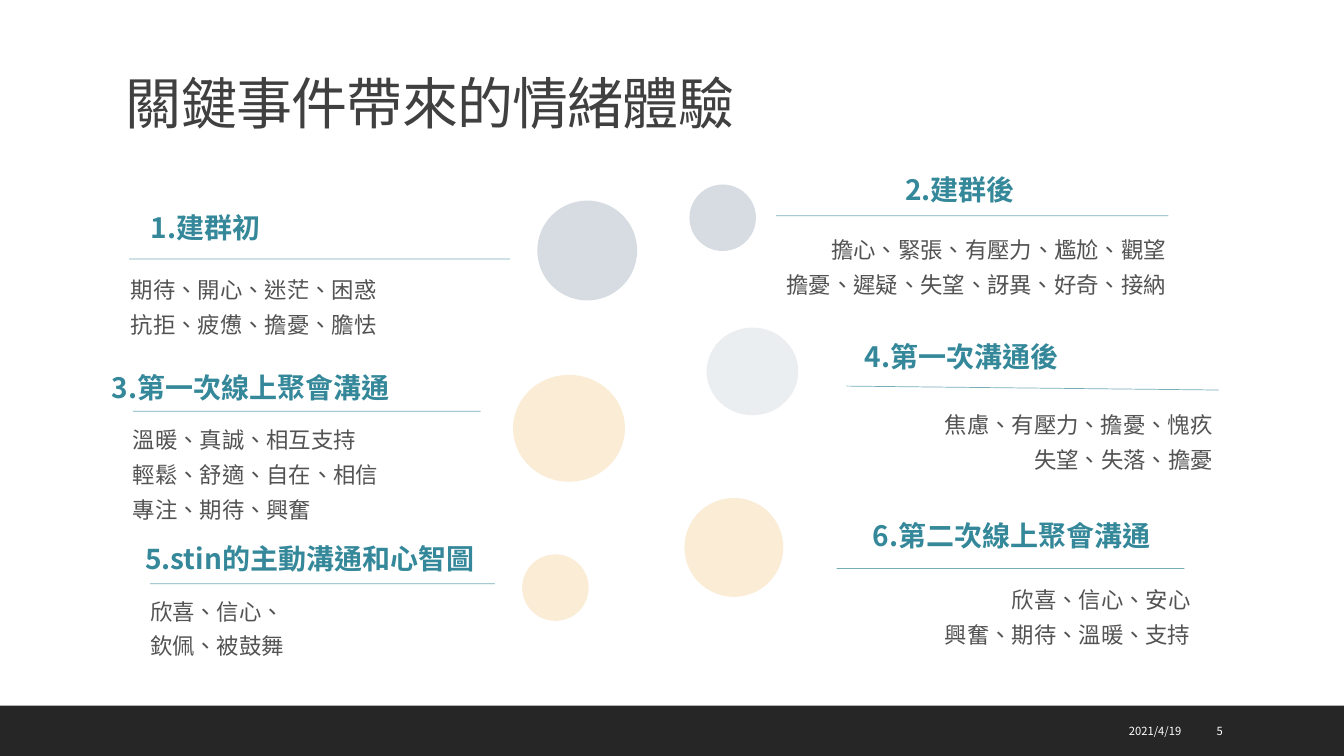
from dataclasses import dataclass

import lxml.etree
import pptx
import pptx.dml.color
import pptx.enum.shapes
import pptx.enum.text
import pptx.oxml.ns
import pptx.util

Pt = pptx.util.Pt
Align = pptx.enum.text.PP_ALIGN
Anchor = pptx.enum.text.MSO_ANCHOR
Shape = pptx.enum.shapes.MSO_SHAPE
qn = pptx.oxml.ns.qn

FONT = "Noto Sans CJK SC"
TEAL, DARK, TITLE_GREY, BODY_GREY, WHITE = "348899", "262626", "404040", "535353", "FFFFFF"
BLUE_GREY, PALE_GREY, CREAM = "D7DCE2", "EBEEF1", "FAECD5"
HEADING_HEIGHT = 31.7
BODY_LINE_HEIGHT = 27


@dataclass(frozen=True)
class Style:
    size: float
    color: str
    bold: bool = False
    align: Align = Align.LEFT
    line_spacing: float | None = None
    tracking: int | None = None
    anchor: Anchor = Anchor.TOP
    side_inset: float = 7.2
    wrap: bool = True


@dataclass(frozen=True)
class Event:
    heading: str
    heading_at: tuple[float, float, float]  # left, top, width
    rule: tuple[float, float, float, float]  # from x, y to x, y
    feelings: tuple[str, ...]
    feelings_at: tuple[float, float, float]
    align: Align


@dataclass(frozen=True)
class Circle:
    left: float
    top: float
    width: float
    height: float
    color: str


TITLE = Style(40, TITLE_GREY, line_spacing=0.9, tracking=-50, anchor=Anchor.BOTTOM, side_inset=3.6)
HEADING = Style(20, TEAL, bold=True)
DATE = Style(8, WHITE, align=Align.RIGHT, anchor=Anchor.MIDDLE, side_inset=3.6)
PAGE_NUMBER = Style(8, WHITE, anchor=Anchor.MIDDLE, side_inset=3.6, wrap=False)

EVENTS = (
    Event("1.建群初", (100.8, 146.9, 165.6), (364.3, 185, 92.2, 185),
          ("期待、開心、迷茫、困惑", "抗拒、疲憊、擔憂、膽怯"), (86.4, 187.9, 270), Align.LEFT),
    Event("3.第一次線上聚會溝通", (72.7, 261.4, 261.4), (343.4, 293.8, 95, 293.8),
          ("溫暖、真誠、相互支持", "輕鬆、舒適、自在、相信", "專注、期待、興奮"),
          (87.8, 295.2, 283.7), Align.LEFT),
    Event("2.建群後", (639.4, 119.5, 232.6), (834.5, 154.1, 554.4, 154.1),
          ("擔心、緊張、有壓力、尷尬、觀望", "擔憂、遲疑、失望、訝異、好奇、接納"),
          (548.6, 159.1, 291.6), Align.RIGHT),
    Event("4.第一次溝通後", (610.6, 239, 288.7), (870.5, 278.6, 604.8, 275.8),
          ("焦慮、有壓力、擔憂、愧疚", "失望、失落、擔憂"), (603.4, 284.4, 270), Align.RIGHT),
    Event("6.第二次線上聚會溝通", (616.3, 366.5, 270), (846, 406.1, 597.6, 406.1),
          ("欣喜、信心、安心", "興奮、期待、溫暖、支持"), (587.5, 409.7, 270), Align.RIGHT),
    Event("5.stin的主動溝通和心智圖", (96.5, 383, 258.5), (353.5, 416.9, 107.3, 416.9),
          ("欣喜、信心、", "欽佩、被鼓舞"), (100.1, 417.6, 283.7), Align.LEFT),
)

CIRCLES = (
    Circle(383.8, 143.3, 71.3, 71.3, BLUE_GREY),
    Circle(492.5, 131.8, 47.5, 47.5, BLUE_GREY),
    Circle(504.7, 234, 65.5, 62.6, PALE_GREY),
    Circle(488.9, 355.7, 70.6, 70.6, CREAM),
    Circle(366.5, 267.8, 79.9, 76.3, CREAM),
    Circle(373, 396, 47.5, 47.5, CREAM),
)


def rgb(color: str) -> pptx.dml.color.RGBColor:
    return pptx.dml.color.RGBColor.from_string(color)


def add_text(page, lines: tuple[str, ...], left: float, top: float, width: float,
             height: float, style: Style) -> None:
    box = page.shapes.add_textbox(Pt(left), Pt(top), Pt(width), Pt(height))
    frame = box.text_frame
    frame.word_wrap = style.wrap
    frame.vertical_anchor = style.anchor
    frame.margin_left = frame.margin_right = Pt(style.side_inset)
    frame.margin_top = frame.margin_bottom = Pt(3.6)
    for index, line in enumerate(lines):
        para = frame.add_paragraph() if index else frame.paragraphs[0]
        para.alignment = style.align
        para.line_spacing = style.line_spacing
        span = para.add_run()
        span.text = line
        span.font.name = FONT
        span.font.size = Pt(style.size)
        span.font.bold = style.bold
        span.font.color.rgb = rgb(style.color)
        properties = span.font._element
        properties.set("lang", "zh-TW")
        lxml.etree.SubElement(properties, qn("a:ea")).set("typeface", FONT)
        if style.tracking is not None:
            properties.set("spc", str(style.tracking))


def add_filled(page, kind: Shape, left: float, top: float, width: float, height: float,
               color: str) -> None:
    shape = page.shapes.add_shape(kind, Pt(left), Pt(top), Pt(width), Pt(height))
    shape.shadow.inherit = False
    shape.fill.solid()
    shape.fill.fore_color.rgb = rgb(color)
    shape.line.fill.background()


def add_rule(page, ends: tuple[float, float, float, float]) -> None:
    """Draw a thin teal line at 67 % opacity."""
    rule = page.shapes.add_connector(
        pptx.enum.shapes.MSO_CONNECTOR.STRAIGHT, *(Pt(end) for end in ends))
    rule.line.width = Pt(0.5)
    rule.line.color.rgb = rgb(TEAL)
    properties = rule._element.spPr
    color = properties.find(".//" + qn("a:srgbClr"))
    lxml.etree.SubElement(color, qn("a:alpha")).set("val", "67000")
    lxml.etree.SubElement(properties, qn("a:effectLst"))


def add_event(page, event: Event) -> None:
    add_rule(page, event.rule)
    add_text(page, (event.heading,), *event.heading_at, HEADING_HEIGHT, HEADING)
    feelings = Style(16, BODY_GREY, align=event.align, line_spacing=1.3)
    height = BODY_LINE_HEIGHT * len(event.feelings)
    add_text(page, event.feelings, *event.feelings_at, height, feelings)


def main() -> None:
    deck = pptx.Presentation()
    deck.slide_width, deck.slide_height = Pt(960), Pt(540)
    page = deck.slides.add_slide(deck.slide_layouts[6])
    add_filled(page, Shape.RECTANGLE, 0, 504, 960, 36, DARK)
    add_text(page, ("關鍵事件帶來的情緒體驗",), 86.4, 22.3, 792, 78.5, TITLE)
    for event in EVENTS:
        add_event(page, event)
    for circle in CIRCLES:
        add_filled(page, Shape.OVAL, circle.left, circle.top, circle.width, circle.height,
                   circle.color)
    add_text(page, ("2021/4/19",), 650.9, 513.4, 196.6, 17.3, DATE)
    add_text(page, ("5",), 865.4, 513.4, 11.5, 17.3, PAGE_NUMBER)
    deck.save("out.pptx")


if __name__ == "__main__":
    main()
